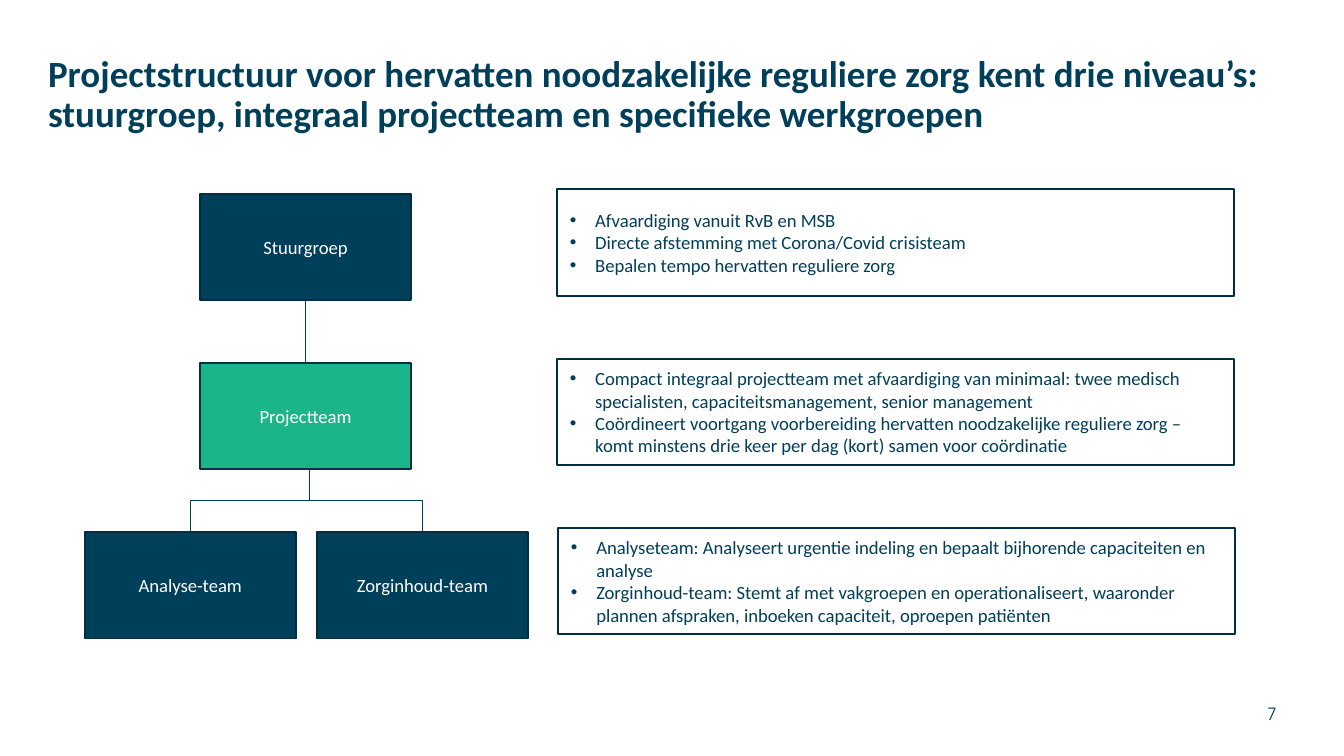
import pptx
import pptx.util
import pptx.dml.color
import pptx.enum.shapes
import pptx.enum.text
import pptx.oxml.ns
from lxml import etree

Cm = pptx.util.Cm
Pt = pptx.util.Pt
RGBColor = pptx.dml.color.RGBColor
Align = pptx.enum.text.PP_ALIGN
Anchor = pptx.enum.text.MSO_ANCHOR
Connector = pptx.enum.shapes.MSO_CONNECTOR
qn = pptx.oxml.ns.qn

NAVY = RGBColor(0x00, 0x3F, 0x5A)
TEXT_NAVY = RGBColor(0x00, 0x3E, 0x5A)
BORDER = RGBColor(0x00, 0x2F, 0x43)
GREEN = RGBColor(0x1A, 0xB5, 0x89)
WHITE = RGBColor(0xFF, 0xFF, 0xFF)


class SlideBuilder:
    font = "Calibri"
    number_font = "TeX Gyre Adventor"
    body_size = 10

    def __init__(self, slide):
        self.slide = slide

    def style(self, paragraph, size, color, align, font=None, bold=False):
        paragraph.alignment = align
        for run in paragraph.runs:
            run.font.name = font or self.font
            run.font.size = Pt(size)
            run.font.bold = bold
            run.font.color.rgb = color

    def text(self, left, top, width, height, wording, size, align=Align.LEFT,
             anchor=Anchor.TOP, font=None, bold=False, spacing=1.0):
        box = self.slide.shapes.add_textbox(Cm(left), Cm(top), Cm(width), Cm(height))
        box.text_frame.word_wrap = True
        box.text_frame.vertical_anchor = anchor
        box.text_frame.text = wording
        paragraph = box.text_frame.paragraphs[0]
        paragraph.line_spacing = spacing
        self.style(paragraph, size, NAVY, align, font, bold)

    def box(self, left, top, width, height, wording, fill=None):
        shape = self.slide.shapes.add_shape(
            pptx.enum.shapes.MSO_SHAPE.RECTANGLE,
            Cm(left), Cm(top), Cm(width), Cm(height))
        shape.shadow.inherit = False
        if fill is None:
            shape.fill.background()
        else:
            shape.fill.solid()
            shape.fill.fore_color.rgb = fill
        shape.line.color.rgb = BORDER
        shape.line.width = Pt(1)
        shape.text_frame.word_wrap = True
        shape.text_frame.vertical_anchor = Anchor.MIDDLE
        shape.text_frame.text = wording
        for paragraph in shape.text_frame.paragraphs:
            self.style(paragraph, self.body_size, WHITE, Align.CENTER)
        return shape

    def bullet_box(self, left, top, width, height, points):
        shape = self.box(left, top, width, height, "\n".join(points))
        for paragraph in shape.text_frame.paragraphs:
            self.style(paragraph, self.body_size, TEXT_NAVY, Align.LEFT)
            properties = paragraph._p.get_or_add_pPr()
            properties.set("marL", str(Cm(0.48)))
            properties.set("indent", str(Cm(-0.48)))
            etree.SubElement(properties, qn("a:buFont")).set("typeface", "Arial")
            etree.SubElement(properties, qn("a:buChar")).set("char", "•")

    def line(self, x1, y1, x2, y2, kind=Connector.STRAIGHT):
        connector = self.slide.shapes.add_connector(kind, Cm(x1), Cm(y1), Cm(x2), Cm(y2))
        connector.line.color.rgb = NAVY
        connector.line.width = Pt(0.5)
        etree.SubElement(connector._element.spPr, qn("a:effectLst"))
        return connector

    def branch(self, x1, y1, x2, y2):
        """Elbow that leaves downwards: a sideways elbow turned a quarter."""
        mid_x, mid_y = (x1 + x2) / 2, (y1 + y2) / 2
        half_run, half_drop = (x2 - x1) / 2, (y2 - y1) / 2
        side = 1 if half_run > 0 else -1
        elbow = self.line(mid_x + side * half_drop, mid_y - abs(half_run),
                          mid_x - side * half_drop, mid_y + abs(half_run),
                          Connector.ELBOW)
        quarter_turns = 3 if side > 0 else 1
        elbow._element.spPr.find(qn("a:xfrm")).set("rot", str(quarter_turns * 5400000))


LEVEL_STEP = 3.2
TEAM_W, BOX_H = 3.99, 2.01
TEAM_TOP, TASKS_TOP = 3.66, 3.58
TASKS_W = 12.8
PARENT_LEFT = 3.78

# Team name, left edge, level, fill
TEAMS = [
    ("Stuurgroep", PARENT_LEFT, 0, NAVY),
    ("Projectteam", PARENT_LEFT, 1, GREEN),
    ("Analyse-team", 1.6, 2, NAVY),
    ("Zorginhoud-team", 5.99, 2, NAVY),
]

# Left edge and tasks of each level
TASKS = [
    (10.52, ["Afvaardiging vanuit RvB en MSB",
             "Directe afstemming met Corona/Covid crisisteam",
             "Bepalen tempo hervatten reguliere zorg"]),
    (10.52, ["Compact integraal projectteam met afvaardiging van minimaal: twee medisch "
             "specialisten, capaciteitsmanagement, senior management",
             "Coördineert voortgang voorbereiding hervatten noodzakelijke reguliere zorg – "
             "komt minstens drie keer per dag (kort) samen voor coördinatie"]),
    (10.54, ["Analyseteam: Analyseert urgentie indeling en bepaalt bijhorende "
             "capaciteiten en analyse",
             "Zorginhoud-team: Stemt af met vakgroepen en operationaliseert, waaronder "
             "plannen afspraken, inboeken capaciteit, oproepen patiënten"]),
]


def main():
    deck = pptx.Presentation()
    deck.slide_width, deck.slide_height = Cm(25.4), Cm(14.29)
    builder = SlideBuilder(deck.slides.add_slide(deck.slide_layouts[6]))

    # Title and page number
    builder.text(0.66, 1.07, 24.18, 1.47,
                 "Projectstructuur voor hervatten noodzakelijke reguliere zorg kent drie "
                 "niveau’s: stuurgroep, integraal projectteam en specifieke werkgroepen",
                 19.8, anchor=Anchor.MIDDLE, bold=True, spacing=0.9)
    builder.text(23.11, 13.18, 1.27, 0.76, "7", 9, Align.RIGHT,
                 font=builder.number_font)

    # Teams
    for name, left, level, fill in TEAMS:
        builder.box(left, TEAM_TOP + level * LEVEL_STEP, TEAM_W, BOX_H, name, fill)

    # Lines between the levels
    steering_bottom = TEAM_TOP + BOX_H
    project_top = TEAM_TOP + LEVEL_STEP
    parent_x = PARENT_LEFT + TEAM_W / 2
    builder.line(parent_x, steering_bottom, parent_x, project_top)
    for name, left, level, fill in TEAMS[2:]:
        builder.branch(5.84, project_top + BOX_H,
                       left + TEAM_W / 2, project_top + LEVEL_STEP)

    # Tasks per level
    for level, (left, points) in enumerate(TASKS):
        builder.bullet_box(left, TASKS_TOP + level * LEVEL_STEP, TASKS_W, BOX_H, points)

    deck.save("out.pptx")


if __name__ == "__main__":
    main()
